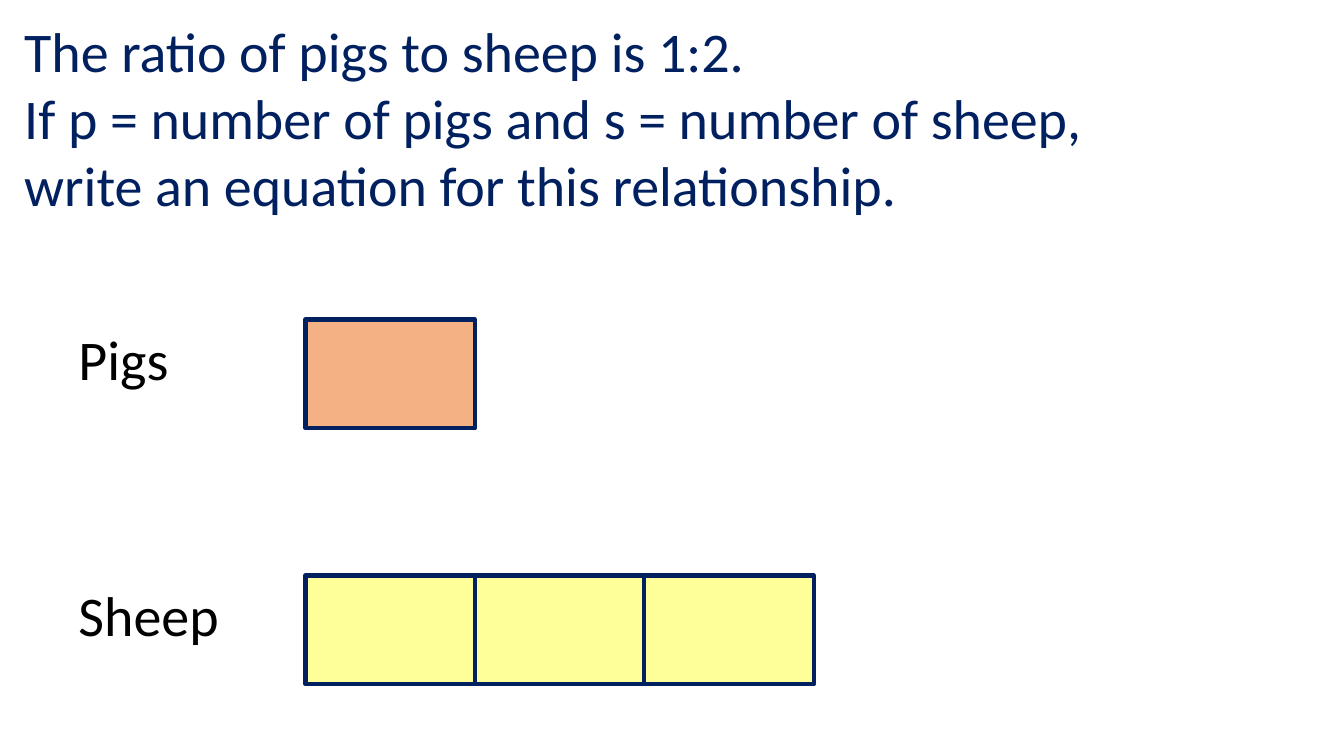
from dataclasses import dataclass

from pptx import Presentation
from pptx.dml.color import RGBColor
from pptx.enum.shapes import MSO_SHAPE
from pptx.enum.text import MSO_ANCHOR, MSO_AUTO_SIZE, PP_ALIGN
from pptx.util import Inches, Pt


@dataclass(frozen=True)
class Theme:
    font: str = "Calibri"
    size: Pt = Pt(40)
    outline: Pt = Pt(3)
    navy: RGBColor = RGBColor(0x00, 0x20, 0x60)
    black: RGBColor = RGBColor(0x00, 0x00, 0x00)
    orange: RGBColor = RGBColor(0xF4, 0xB1, 0x83)
    yellow: RGBColor = RGBColor(0xFF, 0xFF, 0x99)


theme = Theme()


def write_lines(shape, lines, color):
    frame = shape.text_frame
    frame.text = "\n".join(lines)
    frame.word_wrap = True
    frame.auto_size = MSO_AUTO_SIZE.NONE
    frame.vertical_anchor = MSO_ANCHOR.TOP
    for paragraph in frame.paragraphs:
        paragraph.alignment = PP_ALIGN.LEFT
        paragraph.font.name = theme.font
        paragraph.font.size = theme.size
        paragraph.font.color.rgb = color


presentation = Presentation()
presentation.slide_width = Inches(13.33)
presentation.slide_height = Inches(7.5)
slide = presentation.slides.add_slide(presentation.slide_layouts[5])

title = slide.shapes.title
title.left, title.top = Inches(0.14), Inches(0.11)
title.width, title.height = Inches(13.05), Inches(2.12)
question = [
    "The ratio of pigs to sheep is 1:2.",
    "If p = number of pigs and s = number of sheep,",
    "write an equation for this relationship.",
]
write_lines(title, question, theme.navy)

bar_left = 3.03
unit_width = 1.68
unit_height = 1.08
bars = [
    ("Pigs", 3.17, 1, theme.orange),
    ("Sheep", 5.71, 3, theme.yellow),
]

for animal, top, units, color in bars:
    label = slide.shapes.add_textbox(
        Inches(0.68), Inches(top), Inches(1.68), Inches(1.04)
    )
    write_lines(label, [animal], theme.black)
    for index in range(units):
        unit = slide.shapes.add_shape(
            MSO_SHAPE.RECTANGLE,
            Inches(bar_left + index * unit_width),
            Inches(top),
            Inches(unit_width),
            Inches(unit_height),
        )
        unit.shadow.inherit = False
        unit.fill.solid()
        unit.fill.fore_color.rgb = color
        unit.line.color.rgb = theme.navy
        unit.line.width = theme.outline

presentation.save("out.pptx")
